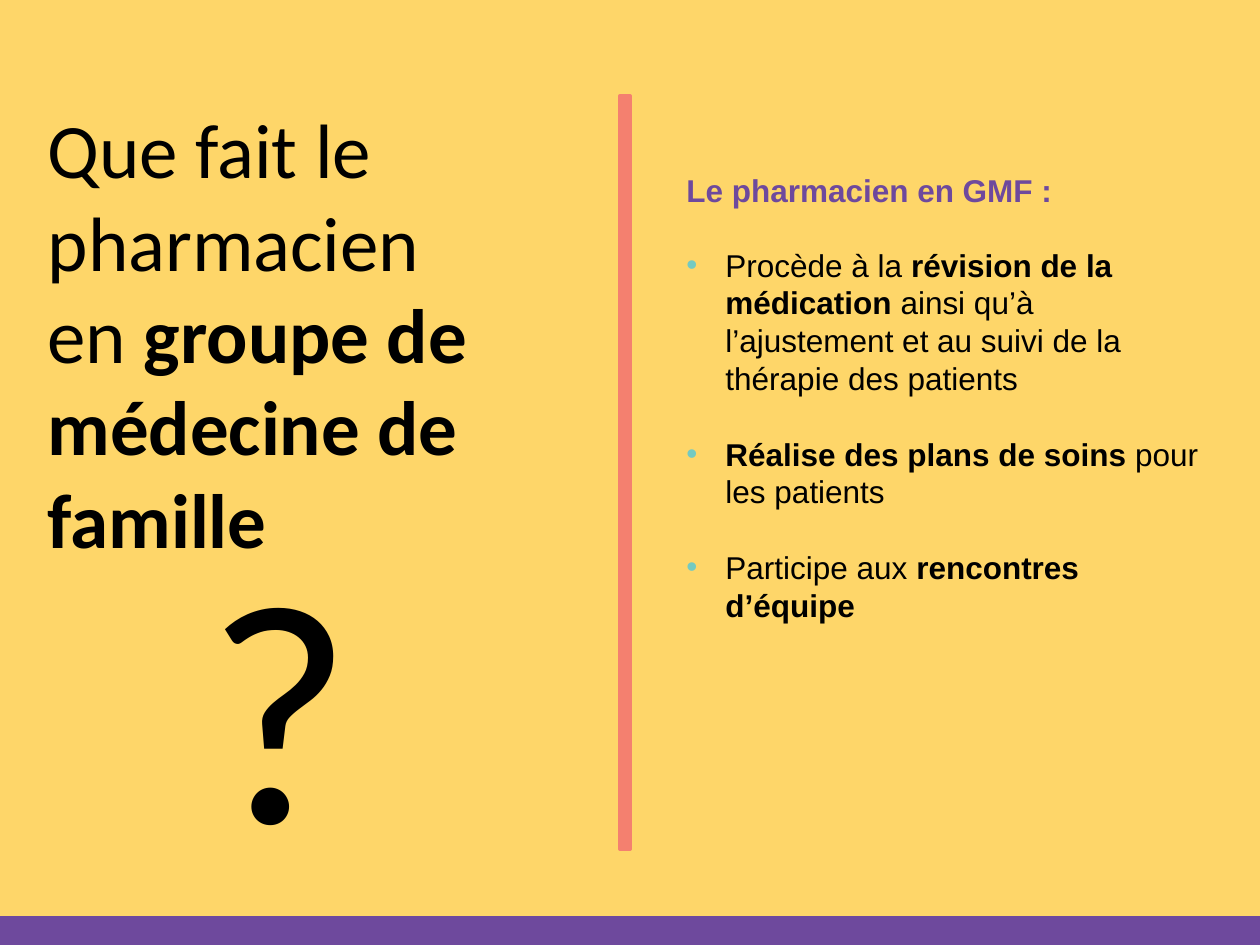
from dataclasses import dataclass

from lxml import etree
from pptx import Presentation
from pptx.dml.color import RGBColor
from pptx.enum.shapes import MSO_SHAPE
from pptx.enum.text import MSO_AUTO_SIZE
from pptx.oxml.ns import qn
from pptx.util import Inches, Pt

RECTANGLE = MSO_SHAPE.RECTANGLE
GROW = MSO_AUTO_SIZE.SHAPE_TO_FIT_TEXT


@dataclass(frozen=True)
class Theme:
    yellow: str = "FED669"
    coral: str = "F4806F"
    purple: str = "6E499D"
    teal: str = "74CAC1"
    black: str = "000000"
    title_font: str = "Calibri"
    body_font: str = "Arial"
    title_size: float = 44
    body_size: float = 18
    symbol_size: float = 180
    outline: float = 2
    bullet_gap: float = 21.6
    bullet_indent: float = 0.31


THEME = Theme()
TITLE = {"name": THEME.title_font, "size": Pt(THEME.title_size)}
BODY = {"name": THEME.body_font, "size": Pt(THEME.body_size)}
SYMBOL = {"name": THEME.title_font, "size": Pt(THEME.symbol_size)}

# Each paragraph is a list of (text, bold) pieces
QUESTION = [[("Que fait le pharmacien\ven ", False),
             ("groupe de médecine de famille", True)]]
HEADING = [[("Le pharmacien en GMF :", True)]]
TASKS = [
    [("Procède à la ", False), ("révision de la médication ", True),
     ("ainsi qu’à l’ajustement et au suivi de la thérapie des patients", False)],
    [("Réalise des plans de soins ", True), ("pour les patients", False)],
    [("Participe aux ", False), ("rencontres d’équipe", True)],
]


def add_block(slide, box, color):
    """Add a filled rectangle outlined in its own colour."""
    shape = slide.shapes.add_shape(RECTANGLE, *map(Inches, box))
    shape.shadow.inherit = False
    shape.fill.solid()
    shape.fill.fore_color.rgb = RGBColor.from_string(color)
    shape.line.color.rgb = RGBColor.from_string(color)
    shape.line.width = Pt(THEME.outline)


def add_text(slide, box, paragraphs, font_format, color=THEME.black):
    """Add a wrapped text box and return its text frame."""
    frame = slide.shapes.add_textbox(*map(Inches, box)).text_frame
    frame.word_wrap = True
    frame.auto_size = GROW
    for index, pieces in enumerate(paragraphs):
        paragraph = frame.add_paragraph() if index else frame.paragraphs[0]
        for text, bold in pieces:
            add_run(paragraph, text, {**font_format, "bold": bold}, color)
    return frame


def add_run(paragraph, text, font_format, color):
    """Add text in one format; a vertical tab marks a line break."""
    for index, line in enumerate(text.split("\v")):
        if index:
            paragraph.add_line_break()
        run = paragraph.add_run()
        run.text = line
        for attribute, value in font_format.items():
            setattr(run.font, attribute, value)
        run.font.color.rgb = RGBColor.from_string(color)


def add_bullets(frame):
    """Give every paragraph a coloured bullet and space between items."""
    indent = Inches(THEME.bullet_indent)
    for index, paragraph in enumerate(frame.paragraphs):
        if index:
            paragraph.space_before = Pt(THEME.bullet_gap)
        properties = paragraph._p.get_or_add_pPr()
        properties.set("marL", str(indent))
        properties.set("indent", str(-indent))
        bullet_color = etree.SubElement(properties, qn("a:buClr"))
        etree.SubElement(bullet_color, qn("a:srgbClr"), val=THEME.teal)
        etree.SubElement(properties, qn("a:buFont"), typeface=THEME.body_font)
        etree.SubElement(properties, qn("a:buChar"), char="•")


def main():
    presentation = Presentation()
    presentation.slide_width = Inches(10)
    presentation.slide_height = Inches(7.5)
    slide = presentation.slides.add_slide(presentation.slide_layouts[6])

    # Backdrop and divider
    add_block(slide, (0, 0, 10, 7.5), THEME.yellow)
    add_block(slide, (4.92, 0.76, 0.08, 5.98), THEME.coral)

    # Question on the left, tasks on the right
    add_text(slide, (0.28, 0.76, 4.57, 3.8), QUESTION, TITLE)
    add_bullets(add_text(slide, (5.35, 1.9, 4.33, 3.43), TASKS, BODY))

    # Footer band
    add_block(slide, (0, 7.28, 10, 0.22), THEME.purple)

    # Task heading and large question mark
    add_text(slide, (5.35, 1.31, 4.1, 0.4), HEADING, BODY, THEME.purple)
    add_text(slide, (1.54, 3.99, 1.34, 3.13), [[("?", False)]], SYMBOL)

    presentation.save("out.pptx")


if __name__ == "__main__":
    main()
